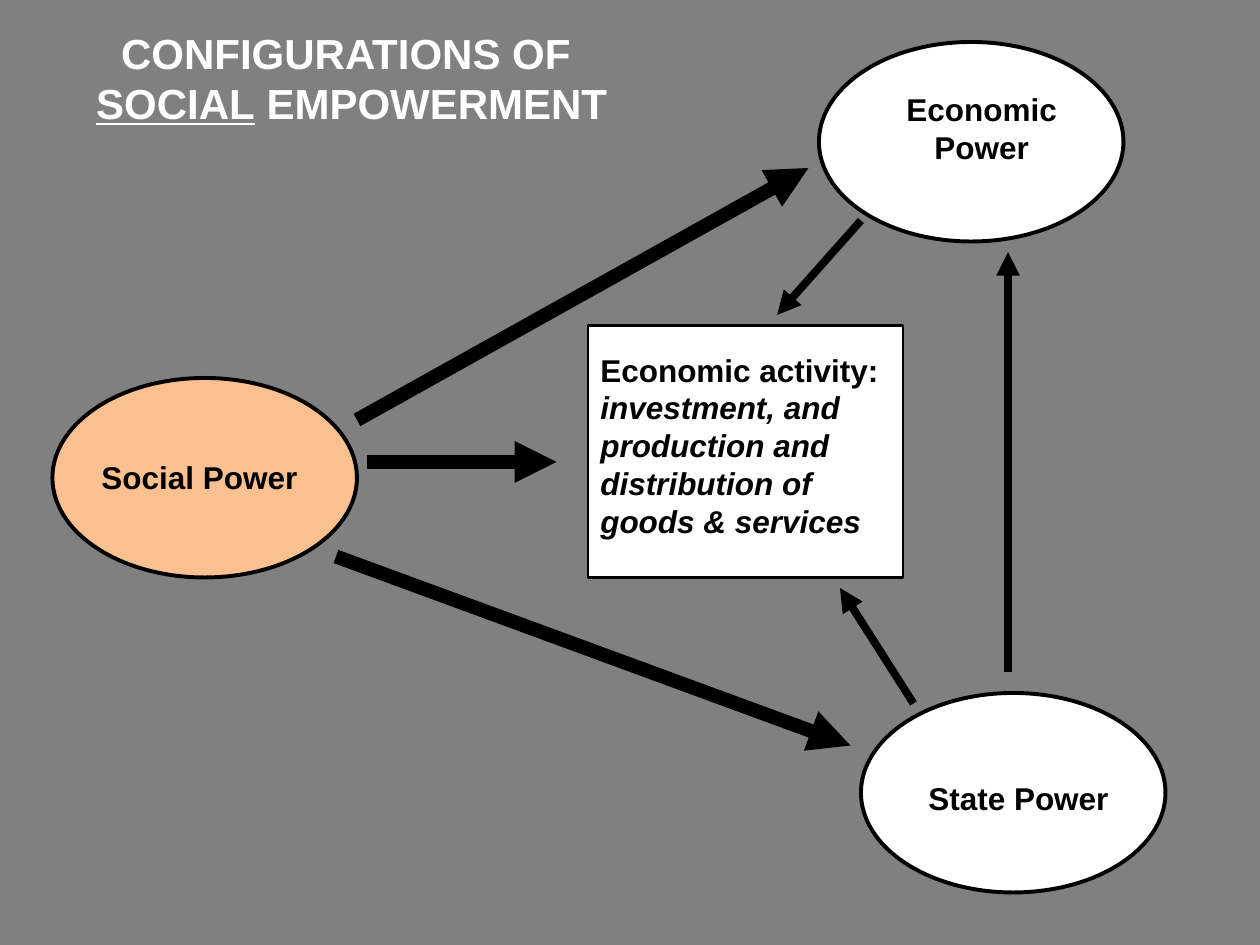
from lxml import etree
from pptx import Presentation, util as u
from pptx.dml.color import RGBColor
from pptx.enum import shapes, text
from pptx.oxml.ns import qn

THEME = {
    "font": "Arial", "title_size": 24, "body_size": 18,
    "background": "808080", "ink": "000000", "paper": "FFFFFF", "accent": "FAC090",
    "ellipse_line": 2.25, "box_line": 1.5, "thick": 8, "thin": 4.5,
}

# All positions are counted in cells of a 120 x 90 grid on a 10 x 7.5 inch slide.
CELL = u.Inches(10) / 120
ELLIPSE = (29, 19)

# Each paragraph is a list of (words, style) runs.
TITLE = ((0, 2, 67, 11), [
    [("CONFIGURATIONS OF ", "")],
    [("SOCIAL", "underline"), (" EMPOWERMENT", "")],
])
ACTIVITY = ((56, 31, 30, 24), [[
    ("Economic activity:", ""),
    (" investment, and production and distribution of goods & services", "italic"),
]])
# ellipse corner, ellipse fill, label area, label top inset in inches, label lines
POWERS = [
    ((5, 36), "accent", (8, 43, 22, 6), 0.05, ["Social Power"]),
    ((78, 4), "paper", (83, 8, 21, 11), 0.05, ["Economic", "Power"]),
    ((82, 66), "paper", (86, 70, 22, 11), 0.35, ["State Power"]),
]
ARROWS = [
    ((34, 40), (77, 16), "thick"),
    ((32, 53), (81, 71), "thick"),
    ((35, 44), (53, 44), "thick"),
    ((96, 64), (96, 24), "thin"),
    ((87, 67), (80, 56), "thin"),
    ((82, 21), (74, 30), "thin"),
]


def color(name):
    return RGBColor.from_string(THEME[name])


def cells(values):
    return [round(value * CELL) for value in values]


def add_figure(slide, kind, area, fill, line_width):
    figure = slide.shapes.add_shape(kind, *cells(area))
    figure.shadow.inherit = False
    figure.fill.solid()
    figure.fill.fore_color.rgb = color(fill)
    figure.line.color.rgb = color("ink")
    figure.line.width = u.Pt(line_width)
    return figure


def write(box, paragraphs, size, ink, align, top=0.05):
    frame = box.text_frame
    frame.word_wrap = True
    frame.vertical_anchor = text.MSO_ANCHOR.TOP
    frame.margin_top = u.Inches(top)
    for index, runs in enumerate(paragraphs):
        para = frame.add_paragraph() if index else frame.paragraphs[0]
        para.alignment = align
        for words, style in runs:
            span = para.add_run()
            span.text = words
            span.font.name = THEME["font"]
            span.font.size = u.Pt(THEME[size])
            span.font.bold = True
            span.font.color.rgb = color(ink)
            if style:
                setattr(span.font, style, True)


def add_arrow(slide, start, end, weight):
    arrow = slide.shapes.add_connector(
        shapes.MSO_CONNECTOR.STRAIGHT, *cells(start + end))
    arrow.line.color.rgb = color("ink")
    arrow.line.width = u.Pt(THEME[weight])
    etree.SubElement(arrow.line._get_or_add_ln(), qn("a:tailEnd"), type="triangle")
    etree.SubElement(arrow._element.spPr, qn("a:effectLst"))


def main():
    deck = Presentation()
    deck.slide_width, deck.slide_height = u.Inches(10), u.Inches(7.5)
    page = deck.slides.add_slide(deck.slide_layouts[6])
    page.background.fill.solid()
    page.background.fill.fore_color.rgb = color("background")

    center, left = text.PP_ALIGN.CENTER, text.PP_ALIGN.LEFT
    for corner, fill, label_area, top, lines in POWERS:
        add_figure(page, shapes.MSO_SHAPE.OVAL, corner + ELLIPSE, fill,
                   THEME["ellipse_line"])
        label = page.shapes.add_textbox(*cells(label_area))
        write(label, [[(line, "")] for line in lines], "body_size", "ink", center, top)

    for start, end, weight in ARROWS:
        add_arrow(page, start, end, weight)

    area, paragraphs = TITLE
    write(page.shapes.add_textbox(*cells(area)), paragraphs,
          "title_size", "paper", center)

    area, paragraphs = ACTIVITY
    activity = add_figure(page, shapes.MSO_SHAPE.RECTANGLE, area, "paper",
                          THEME["box_line"])
    write(activity, paragraphs, "body_size", "ink", left, top=0.2)

    deck.save("out.pptx")


if __name__ == "__main__":
    main()
